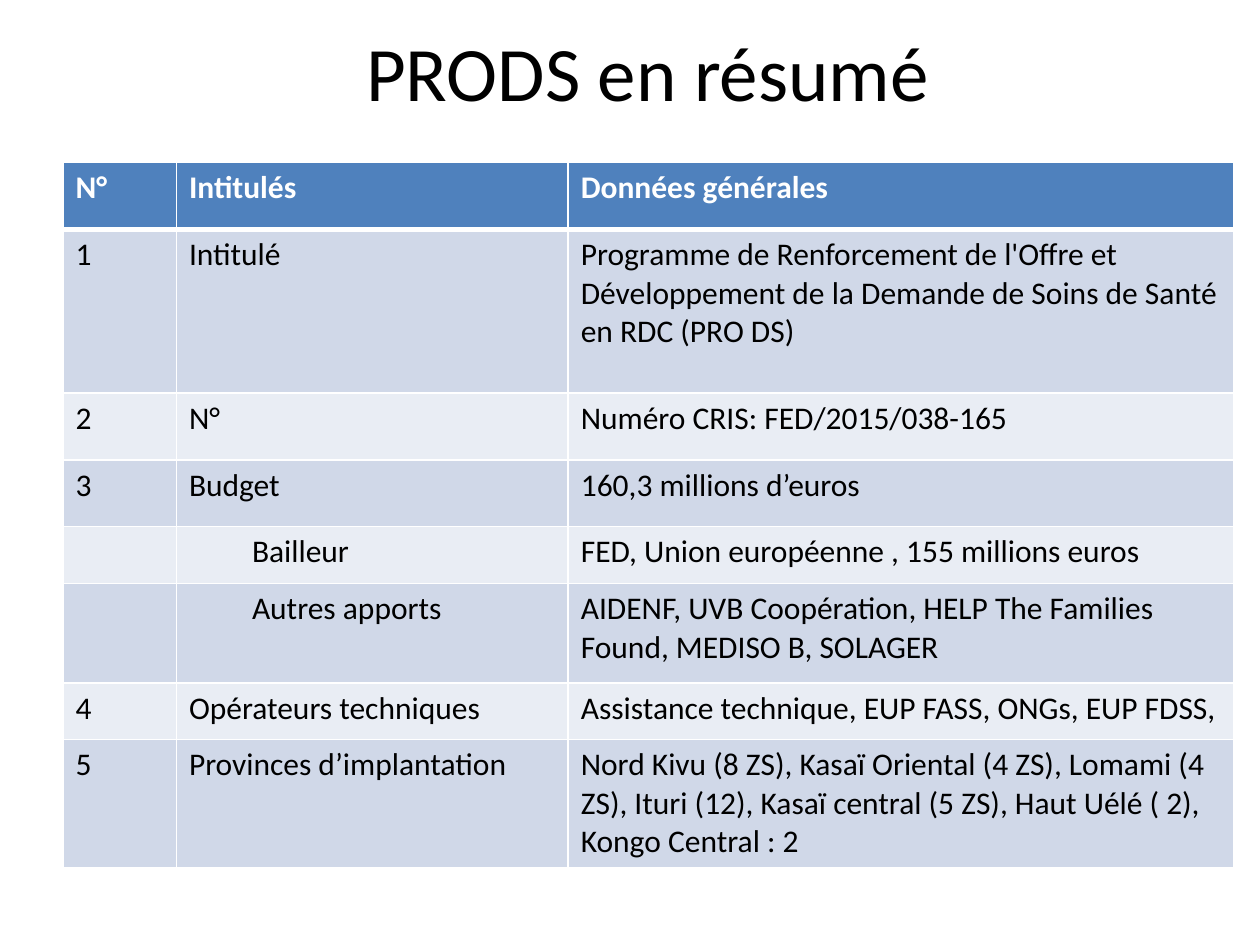
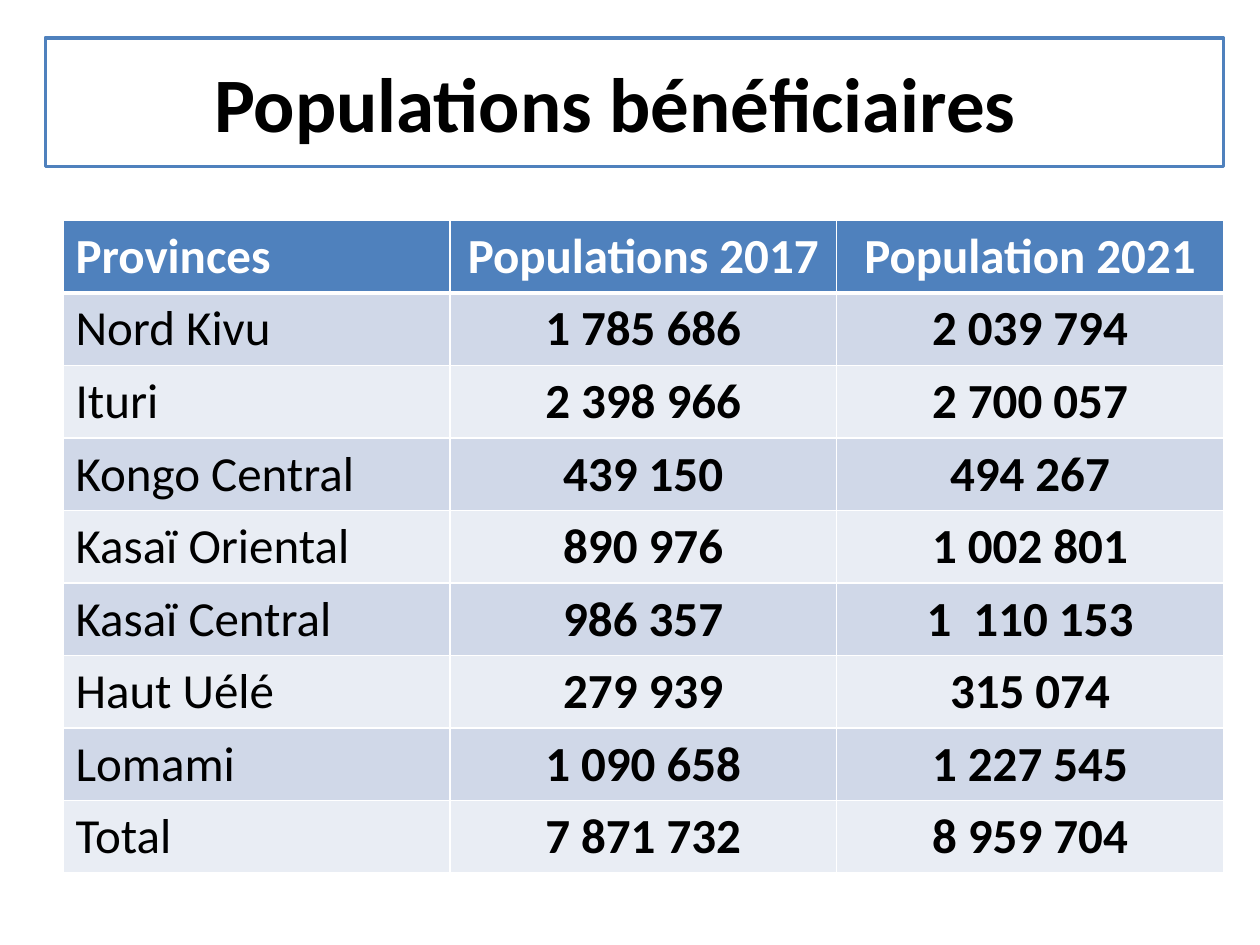
from dataclasses import dataclass
from lxml.etree import SubElement
from pptx import Presentation
from pptx.dml.color import RGBColor as Rgb
from pptx.enum.text import MSO_ANCHOR as Anchor, PP_ALIGN as Align
from pptx.oxml.ns import qn
from pptx.util import Inches, Pt


@dataclass(frozen=True)
class Theme:
    font: str = "Calibri"
    accent: str = "4F81BD"
    bands: tuple = ("D0D8E8", "E9EDF4")
    paper: str = "FFFFFF"
    ink: str = "000000"
    title_size: int = 44
    grid: float = 1
    header_rule: float = 3
    frame: float = 2
    indent: float = 0.5


THEME = Theme()

SUMMARY = {
    "title": "PRODS en résumé",
    "title_box": (0.5, 0.07, 9.28, 0.99),
    "framed": False,
    "origin": (0.5, 1.29),
    "columns": (0.9, 3.11, 5.28),
    "heights": (0.53, 1.3, 0.53, 0.53, 0.45, 0.79, 0.45, 0.91),
    "size": 18,
    "figures": False,
    "sub_items": ("Bailleur", "Autres apports"),
    "rows": [
        ("N°", "Intitulés", "Données générales"),
        ("1", "Intitulé", "Programme de Renforcement de l'Offre et Développement de la "
                          "Demande de Soins de Santé en RDC (PRO DS)"),
        ("2", "N°", "Numéro CRIS: FED/2015/038-165"),
        ("3", "Budget", "160,3 millions d’euros"),
        ("", "Bailleur", "FED, Union européenne , 155 millions euros"),
        ("", "Autres apports", "AIDENF, UVB Coopération, HELP The Families Found, "
                               "MEDISO B, SOLAGER"),
        ("4", "Opérateurs techniques", "Assistance technique, EUP FASS, ONGs, EUP FDSS,"),
        ("5", "Provinces d’implantation",
         "Nord Kivu (8 ZS), Kasaï Oriental (4 ZS), Lomami (4 ZS), Ituri (12), "
         "Kasaï central (5 ZS), Haut Uélé ( 2), Kongo Central : 2"),
    ],
}

POPULATIONS = {
    "title": "Populations bénéficiaires",
    "title_box": (0.36, 0.3, 9.35, 1.02),
    "framed": True,
    "origin": (0.5, 1.75),
    "columns": (3.07,) * 3,
    "heights": (0.57,) * 9,
    "size": 28,
    "figures": True,
    "sub_items": (),
    "rows": [
        ("Provinces", "Populations 2017", "Population 2021"),
        ("Nord Kivu", "1 785 686", "2 039 794"),
        ("Ituri", "2 398 966", "2 700 057"),
        ("Kongo Central", "439 150", "494 267"),
        ("Kasaï Oriental", "890 976", "1 002 801"),
        ("Kasaï Central", "986 357", "1  110 153"),
        ("Haut Uélé", "279 939", "315 074"),
        ("Lomami", "1 090 658", "1 227 545"),
        ("Total", "7 871 732", "8 959 704"),
    ],
}


def format_font(font, colour, **values):
    for name, value in {"name": THEME.font, **values}.items():
        setattr(font, name, value)
    font.color.rgb = Rgb.from_string(colour)


def paint(fill, colour):
    fill.solid()
    fill.fore_color.rgb = Rgb.from_string(colour)


def add_title(slide, content):
    title = slide.shapes.title
    for side, value in zip(("left", "top", "width", "height"), content["title_box"]):
        setattr(title, side, Inches(value))
    frame = title.text_frame
    frame.text = content["title"]
    frame.vertical_anchor = Anchor.MIDDLE
    heading = frame.paragraphs[0]
    heading.alignment = Align.CENTER
    format_font(heading.runs[0].font, THEME.ink, size=Pt(THEME.title_size),
                bold=content["framed"])
    if content["framed"]:
        frame.margin_right = Inches(0.4)
        paint(title.fill, THEME.paper)
        paint(title.line.fill, THEME.accent)
        title.line.width = Pt(THEME.frame)


def add_borders(cell, header, below_header):
    thick = THEME.header_rule
    widths = {"L": THEME.grid, "R": THEME.grid,
              "T": thick if below_header else THEME.grid,
              "B": thick if header else THEME.grid}
    properties = cell._tc.get_or_add_tcPr()
    for side, width in widths.items():
        border = SubElement(properties, qn(f"a:ln{side}"), w=str(Pt(width)))
        SubElement(SubElement(border, qn("a:solidFill")), qn("a:srgbClr"), val=THEME.paper)


def fill_cell(cell, text, row, column, content):
    header = row == 0
    figure = content["figures"] and column > 0
    add_borders(cell, header, row == 1)
    paint(cell.fill, THEME.accent if header else THEME.bands[(row - 1) % 2])
    cell.text = text
    entry = cell.text_frame.paragraphs[0]
    entry.alignment = Align.CENTER if figure else Align.LEFT
    if text in content["sub_items"]:
        entry.level = 1
        entry._p.get_or_add_pPr().set("marL", str(Inches(THEME.indent)))
    format_font(entry.runs[0].font if text else entry.font,
                THEME.paper if header else THEME.ink,
                size=Pt(content["size"]), bold=header or figure)


def add_data(slide, content):
    rows, columns, heights = content["rows"], content["columns"], content["heights"]
    box = (*content["origin"], sum(columns), sum(heights))
    table = slide.shapes.add_table(len(rows), len(columns), *map(Inches, box)).table
    for column, width in zip(table.columns, columns):
        column.width = Inches(width)
    for row, height in zip(table.rows, heights):
        row.height = Inches(height)
    for r, entries in enumerate(rows):
        for c, text in enumerate(entries):
            fill_cell(table.cell(r, c), text, r, c, content)


def main():
    deck = Presentation()
    deck.slide_width, deck.slide_height = Inches(10), Inches(7.5)
    for content in (SUMMARY, POPULATIONS):
        slide = deck.slides.add_slide(deck.slide_layouts[5])
        add_title(slide, content)
        add_data(slide, content)
    deck.save("out.pptx")


if __name__ == "__main__":
    main()
